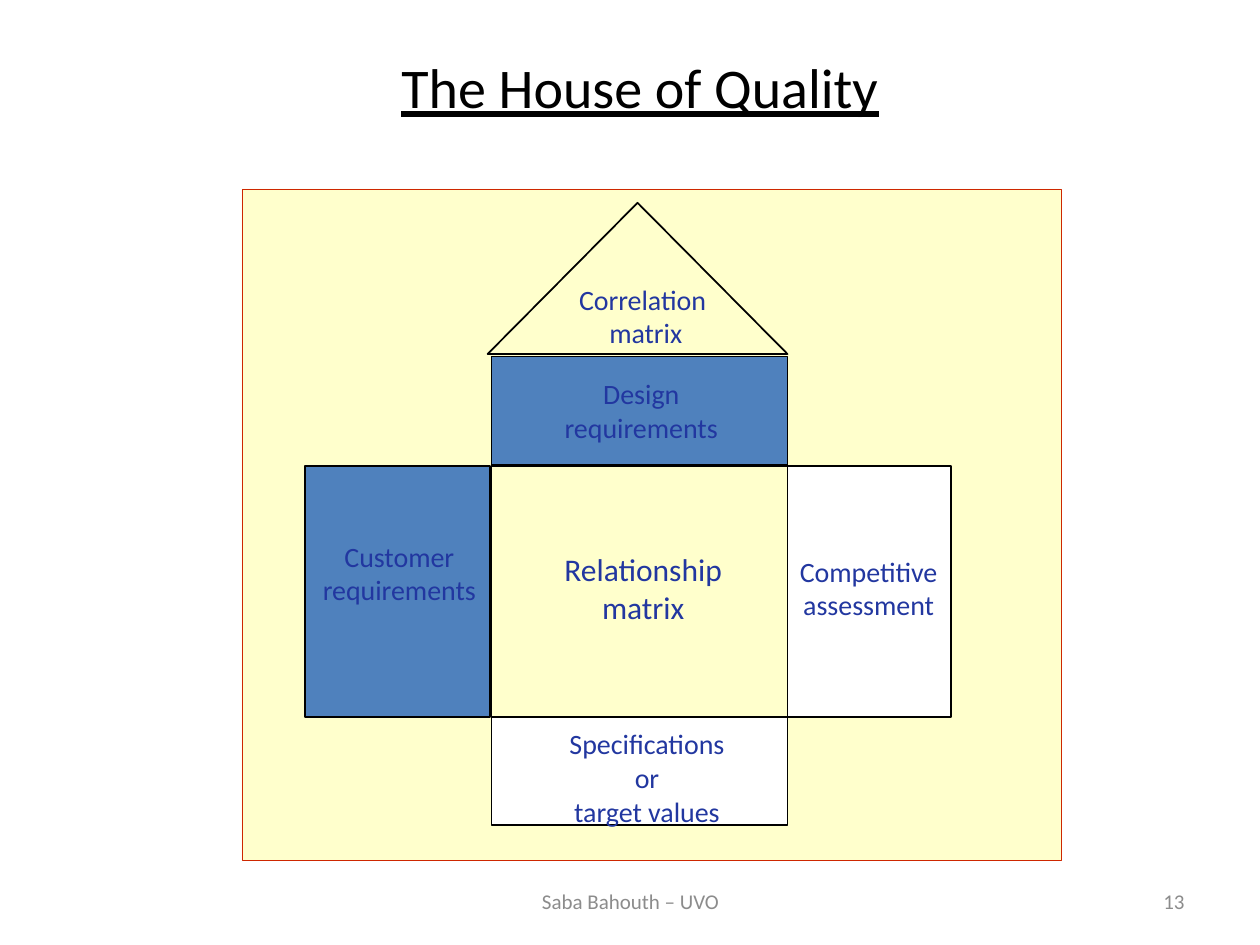
from pptx import Presentation
from pptx.dml.color import RGBColor
from pptx.enum.shapes import MSO_SHAPE
from pptx.enum.text import MSO_ANCHOR, PP_ALIGN
from pptx.util import Inches, Pt

RECT, TRIANGLE = MSO_SHAPE.RECTANGLE, MSO_SHAPE.ISOSCELES_TRIANGLE
TOP, MIDDLE, BOTTOM = MSO_ANCHOR.TOP, MSO_ANCHOR.MIDDLE, MSO_ANCHOR.BOTTOM
CENTER, RIGHT = PP_ALIGN.CENTER, PP_ALIGN.RIGHT

BLACK = RGBColor(0x00, 0x00, 0x00)
WHITE = RGBColor(0xFF, 0xFF, 0xFF)
CREAM = RGBColor(0xFF, 0xFF, 0xCC)
BLUE = RGBColor(0x4F, 0x81, 0xBD)
NAVY = RGBColor(0x22, 0x37, 0xA0)
RED = RGBColor(0xCE, 0x27, 0x00)
GRAY = RGBColor(0x8C, 0x8C, 0x8C)


class Deck:
    """Holds the style and the current slide."""

    font = "Calibri"

    def __init__(self, prs):
        self.s = prs.slides.add_slide(prs.slide_layouts[6])

    def block(self, box, fill, kind=RECT, line=BLACK, width=1):
        sp = self.s.shapes.add_shape(kind, *map(Inches, box))
        sp.shadow.inherit = False
        sp.fill.solid()
        sp.fill.fore_color.rgb = fill
        sp.line.color.rgb = line
        sp.line.width = Pt(width)

    def text(self, box, lines, size=16, color=NAVY, align=CENTER,
             anchor=TOP, wrap=True, underline=None):
        tf = self.s.shapes.add_textbox(*map(Inches, box)).text_frame
        tf.word_wrap = wrap
        tf.vertical_anchor = anchor
        for i, line in enumerate(lines):
            p = tf.add_paragraph() if i else tf.paragraphs[0]
            p.text = line
            p.alignment = align
            p.font.name = self.font
            p.font.size = Pt(size)
            p.font.color.rgb = color
            p.font.underline = underline


def main():
    prs = Presentation()
    prs.slide_width, prs.slide_height = Inches(10), Inches(7.5)
    deck = Deck(prs)

    # Title
    deck.text((0.83, 0.32, 8.5, 0.68), ["The House of Quality"], size=32,
              color=BLACK, anchor=BOTTOM, underline=True)

    # Background panel
    deck.block((1.92, 1.5, 6.5, 5.33), CREAM, line=RED, width=0.25)

    # House: centre, ceiling, floor, roof and the two wings
    left, top, width, height = 3.9, 3.7, 2.35, 1.99
    band = 0.86
    deck.block((left, top, width, height), CREAM)
    deck.block((left, 2.83, width, band), BLUE)
    deck.block((left, top + height, width, band), WHITE)
    deck.block((3.87, 1.61, 2.38, 1.2), CREAM, kind=TRIANGLE)
    deck.block((left + width, top, 1.3, height), WHITE)
    deck.block((2.42, top, 1.47, height), BLUE)

    # Room labels
    deck.text((4.45, 2.19, 1.35, 0.63), ["Correlation ", "matrix"], wrap=False)
    deck.text((4.26, 2.94, 1.66, 0.63), ["Design", "requirements"])
    deck.text((2.42, 4.23, 1.5, 0.63), ["Customer", "requirements"])
    deck.text((6.16, 4.35, 1.47, 0.63), ["Competitive", "assessment"])
    deck.text((4.32, 4.32, 1.57, 0.7), ["Relationship", "matrix"], size=18,
              wrap=False)
    deck.text((4.35, 5.72, 1.57, 0.9),
              ["Specifications", "or", "target values"], wrap=False)

    # Footer
    deck.text((7.17, 6.95, 2.33, 0.4), ["13"], size=12, color=GRAY,
              align=RIGHT, anchor=MIDDLE)
    deck.text((3.42, 6.95, 3.17, 0.4), ["Saba Bahouth – UVO"], size=12,
              color=GRAY, anchor=MIDDLE)

    prs.save("out.pptx")


if __name__ == "__main__":
    main()
